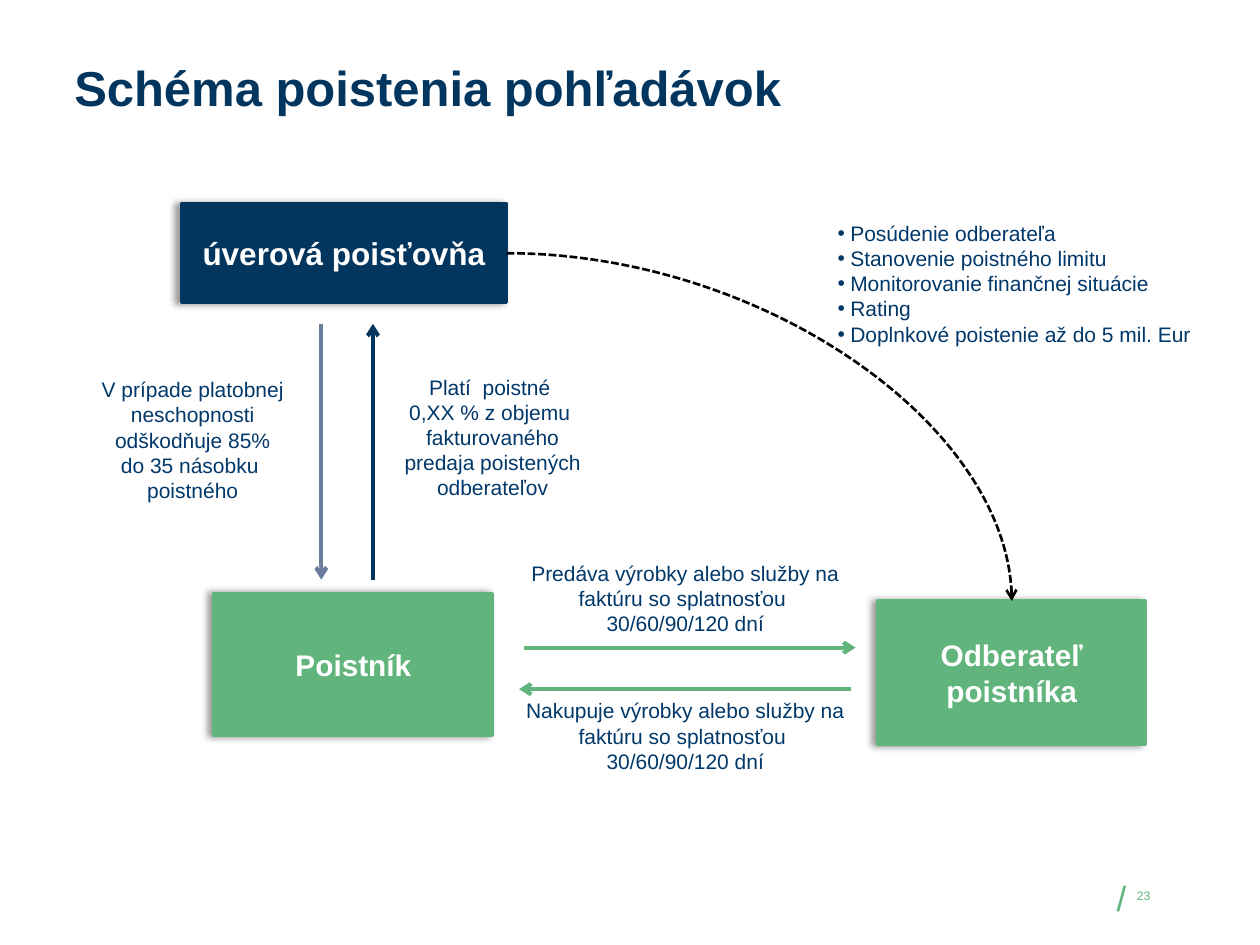
from lxml.etree import SubElement
from pptx import Presentation
from pptx.dml.color import RGBColor
from pptx.enum.dml import MSO_LINE
from pptx.enum.shapes import MSO_CONNECTOR, MSO_SHAPE
from pptx.enum.text import MSO_ANCHOR, PP_ALIGN
from pptx.oxml.ns import qn
from pptx.util import Inches, Pt

NAVY = "03365F"
TEXT = "00386A"
GREEN = "61B57C"
SLATE = "6A7B9C"
WHITE = "FFFFFF"
BLACK = "000000"


def color(value):
    return RGBColor.from_string(value)


class Diagram:
    font = "Arial"

    def __init__(self, page):
        self.page = page

    def fill_text(self, frame, lines, size, ink, bold=False, align=PP_ALIGN.CENTER, bullet=False):
        frame.word_wrap = True
        for index, line in enumerate(lines):
            para = frame.paragraphs[0] if index == 0 else frame.add_paragraph()
            para.text = line
            para.alignment = align
            if bullet:
                properties = para._p.get_or_add_pPr()
                properties.set("marL", str(Inches(0.1)))
                properties.set("indent", str(-Inches(0.1)))
                SubElement(properties, qn("a:buFont"), typeface=self.font)
                SubElement(properties, qn("a:buChar"), char="•")
            para.font.name = self.font
            para.font.size = Pt(size)
            para.font.bold = bold
            para.font.color.rgb = color(ink)

    def text(self, place, lines, size=12, ink=TEXT, inset=True, anchor=MSO_ANCHOR.TOP, **style):
        box = self.page.shapes.add_textbox(*map(Inches, place))
        frame = box.text_frame
        frame.vertical_anchor = anchor
        if not inset:
            frame.margin_left = frame.margin_top = 0
            frame.margin_right = frame.margin_bottom = 0
        self.fill_text(frame, lines, size, ink, **style)
        return box

    def party(self, place, label, size, fill):
        box = self.page.shapes.add_shape(MSO_SHAPE.RECTANGLE, *map(Inches, place))
        box.fill.solid()
        box.fill.fore_color.rgb = color(fill)
        box.line.color.rgb = color(fill)
        box.line.width = Pt(2)
        box.shadow.inherit = False
        effects = box._element.spPr.find(qn("a:effectLst"))
        shadow = SubElement(effects, qn("a:outerShdw"), blurRad=str(Pt(4)),
                            dist=str(Pt(3)), dir="10800000", rotWithShape="0")
        tint = SubElement(shadow, qn("a:srgbClr"), val=BLACK)
        SubElement(tint, qn("a:alpha"), val="40000")
        box.text_frame.vertical_anchor = MSO_ANCHOR.MIDDLE
        self.fill_text(box.text_frame, [label], size, WHITE, bold=True)
        return box

    def arrow(self, start, end, ink, width=2.25, kind=MSO_CONNECTOR.STRAIGHT, dash=None):
        connector = self.page.shapes.add_connector(kind, *map(Inches, start + end))
        connector.line.color.rgb = color(ink)
        connector.line.width = Pt(width)
        if dash:
            connector.line.dash_style = dash
        properties = connector._element.spPr
        SubElement(properties.find(qn("a:ln")), qn("a:tailEnd"), type="arrow")
        SubElement(properties, qn("a:effectLst"))
        return connector

    def curve(self, source, target, start, end):
        connector = self.arrow(start, end, BLACK, 1.5, MSO_CONNECTOR.CURVE, MSO_LINE.SQUARE_DOT)
        connector._element.spPr.find(qn("a:prstGeom")).set("prst", "curvedConnector2")
        connector.begin_connect(source, 3)
        connector.end_connect(target, 0)


def main():
    deck = Presentation()
    deck.slide_width = Inches(10)
    deck.slide_height = Inches(7.5)
    page = deck.slides.add_slide(deck.slide_layouts[6])
    diagram = Diagram(page)

    diagram.text((0.59, 0.46, 8.54, 1.36), ["Schéma poistenia pohľadávok"], 28, NAVY,
                 inset=False, bold=True, align=PP_ALIGN.LEFT)

    insurer = diagram.party((1.44, 1.62, 2.58, 0.78), "úverová poisťovňa", 18, NAVY)
    diagram.party((1.7, 4.71, 2.21, 1.13), "Poistník", 17, GREEN)
    customer = diagram.party((6.97, 4.77, 2.12, 1.14), "Odberateľ poistníka", 17, GREEN)

    diagram.curve(insurer, customer, (4.02, 2.01), (8.03, 4.77))
    diagram.arrow((2.96, 4.6), (2.96, 2.57), NAVY)
    diagram.arrow((2.55, 2.57), (2.55, 4.6), SLATE)
    diagram.arrow((4.16, 5.14), (6.79, 5.14), GREEN)
    diagram.arrow((6.75, 5.47), (4.12, 5.47), GREEN)

    services = [
        "Posúdenie odberateľa",
        "Stanovenie poistného limitu",
        "Monitorovanie finančnej situácie",
        "Rating",
        "Doplnkové poistenie až do 5 mil. Eur",
    ]
    diagram.text((6.55, 1.7, 3.01, 1.11), services, align=PP_ALIGN.LEFT, bullet=True)
    diagram.text((0.51, 2.94, 2.04, 1.11), [
        "V prípade platobnej neschopnosti odškodňuje 85%",
        "do 35 násobku  poistného",
    ])
    diagram.text((3.04, 2.92, 1.74, 1.15), [
        "Platí  poistné ",
        "0,XX % z objemu  fakturovaného predaja poistených odberateľov",
    ])
    for top, action in ((4.4, "Predáva"), (5.49, "Nakupuje")):
        diagram.text((3.91, top, 3.06, 0.73), [
            f"{action} výrobky alebo služby na faktúru so splatnosťou ",
            "30/60/90/120 dní",
        ])

    slash = diagram.text((8.86, 6.95, 0.08, 0.34), ["/"], 20, GREEN,
                         inset=False, anchor=MSO_ANCHOR.BOTTOM)
    slash.text_frame.word_wrap = False
    diagram.text((8.85, 6.82, 0.28, 0.35), ["23"], 7, GREEN,
                 inset=False, anchor=MSO_ANCHOR.BOTTOM, align=PP_ALIGN.RIGHT)

    deck.save("out.pptx")


if __name__ == "__main__":
    main()
